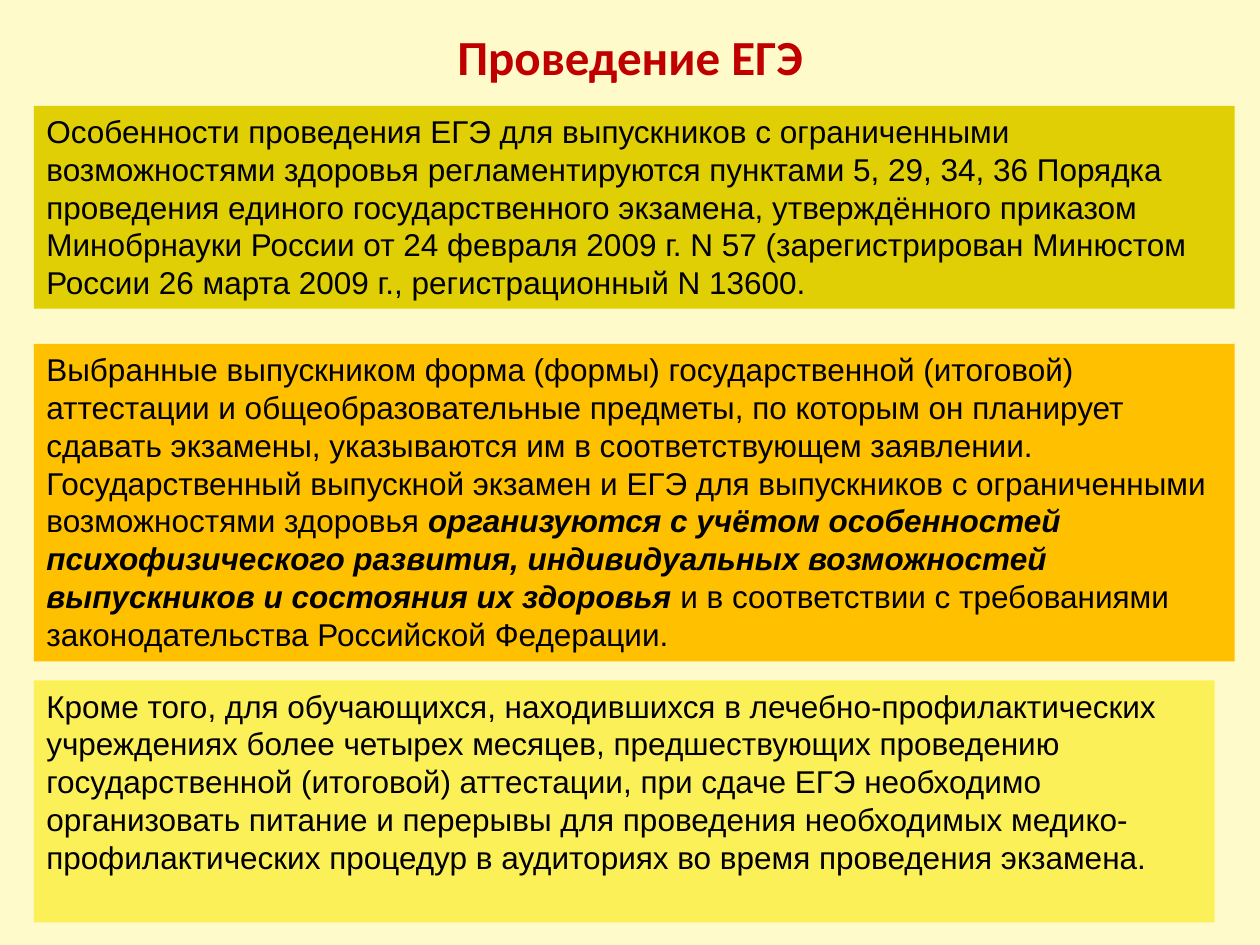
from dataclasses import dataclass

from pptx import Presentation
from pptx.dml.color import RGBColor
from pptx.enum.shapes import MSO_SHAPE
from pptx.enum.text import MSO_ANCHOR, PP_ALIGN
from pptx.util import Inches, Pt


@dataclass(frozen=True)
class Theme:
    background: str = "FEFAC9"
    heading: str = "C00000"
    body: str = "000000"
    olive: str = "DFCF04"
    amber: str = "FFC000"
    lemon: str = "FCF059"
    heading_font: str = "Calibri"
    body_font: str = "Arial"
    heading_size: int = 28
    body_size: int = 18


THEME = Theme()
PANEL_LEFT = 0.27


def style_run(run, font_name, size, color, bold=False, italic=False):
    font = run.font
    font.name = font_name
    font.size = Pt(size)
    font.color.rgb = RGBColor.from_string(color)
    font.bold = bold
    font.italic = italic


# Each panel: top, width, height, fill, paragraphs of (text, emphasised) pieces
PANELS = [
    (0.84, 9.53, 1.61, THEME.olive, [
        [("Особенности проведения ЕГЭ для выпускников с ограниченными "
          "возможностями здоровья регламентируются пунктами 5, 29, 34, 36 "
          "Порядка проведения единого государственного экзамена, "
          "утверждённого приказом Минобрнауки России от 24 февраля 2009 г. "
          "N 57 (зарегистрирован Минюстом России 26 марта 2009 г., "
          "регистрационный N 13600.", False)],
    ]),
    (2.73, 9.53, 2.52, THEME.amber, [
        [("Выбранные выпускником форма (формы) государственной (итоговой) "
          "аттестации и общеобразовательные предметы, по которым он "
          "планирует сдавать экзамены, указываются им в соответствующем "
          "заявлении.", False)],
        [("Государственный выпускной экзамен и ЕГЭ для выпускников с "
          "ограниченными возможностями здоровья ", False),
         ("организуются с учётом особенностей психофизического развития, "
          "индивидуальных возможностей выпускников и состояния их здоровья",
          True),
         (" и в соответствии с требованиями законодательства Российской "
          "Федерации.", False)],
    ]),
    (5.4, 9.37, 1.92, THEME.lemon, [
        [("Кроме того, для обучающихся, находившихся в "
          "лечебно-профилактических учреждениях более четырех месяцев, "
          "предшествующих проведению государственной (итоговой) аттестации, "
          "при сдаче ЕГЭ необходимо организовать питание и перерывы для "
          "проведения необходимых медико-профилактических процедур в "
          "аудиториях во время проведения экзамена.", False)],
    ]),
]

prs = Presentation()
prs.slide_width = Inches(10)
prs.slide_height = Inches(7.5)
slide = prs.slides.add_slide(prs.slide_layouts[6])
slide.background.fill.solid()
slide.background.fill.fore_color.rgb = RGBColor.from_string(THEME.background)

heading = slide.shapes.add_textbox(
    Inches(0.5), Inches(0.21), Inches(9), Inches(0.47)).text_frame
heading.word_wrap = True
heading.vertical_anchor = MSO_ANCHOR.MIDDLE
heading.text = "Проведение ЕГЭ"
heading.paragraphs[0].alignment = PP_ALIGN.CENTER
style_run(heading.paragraphs[0].runs[0], THEME.heading_font,
          THEME.heading_size, THEME.heading, bold=True)

for top, width, height, fill, paragraphs in PANELS:
    panel = slide.shapes.add_shape(
        MSO_SHAPE.RECTANGLE, Inches(PANEL_LEFT), Inches(top),
        Inches(width), Inches(height))
    panel.shadow.inherit = False
    panel.fill.solid()
    panel.fill.fore_color.rgb = RGBColor.from_string(fill)
    panel.line.fill.background()
    frame = panel.text_frame
    frame.word_wrap = True
    frame.vertical_anchor = MSO_ANCHOR.TOP
    for index, pieces in enumerate(paragraphs):
        paragraph = frame.add_paragraph() if index else frame.paragraphs[0]
        paragraph.alignment = PP_ALIGN.LEFT
        for text, emphasised in pieces:
            run = paragraph.add_run()
            run.text = text
            style_run(run, THEME.body_font, THEME.body_size, THEME.body,
                      bold=emphasised, italic=emphasised)

prs.save("out.pptx")
